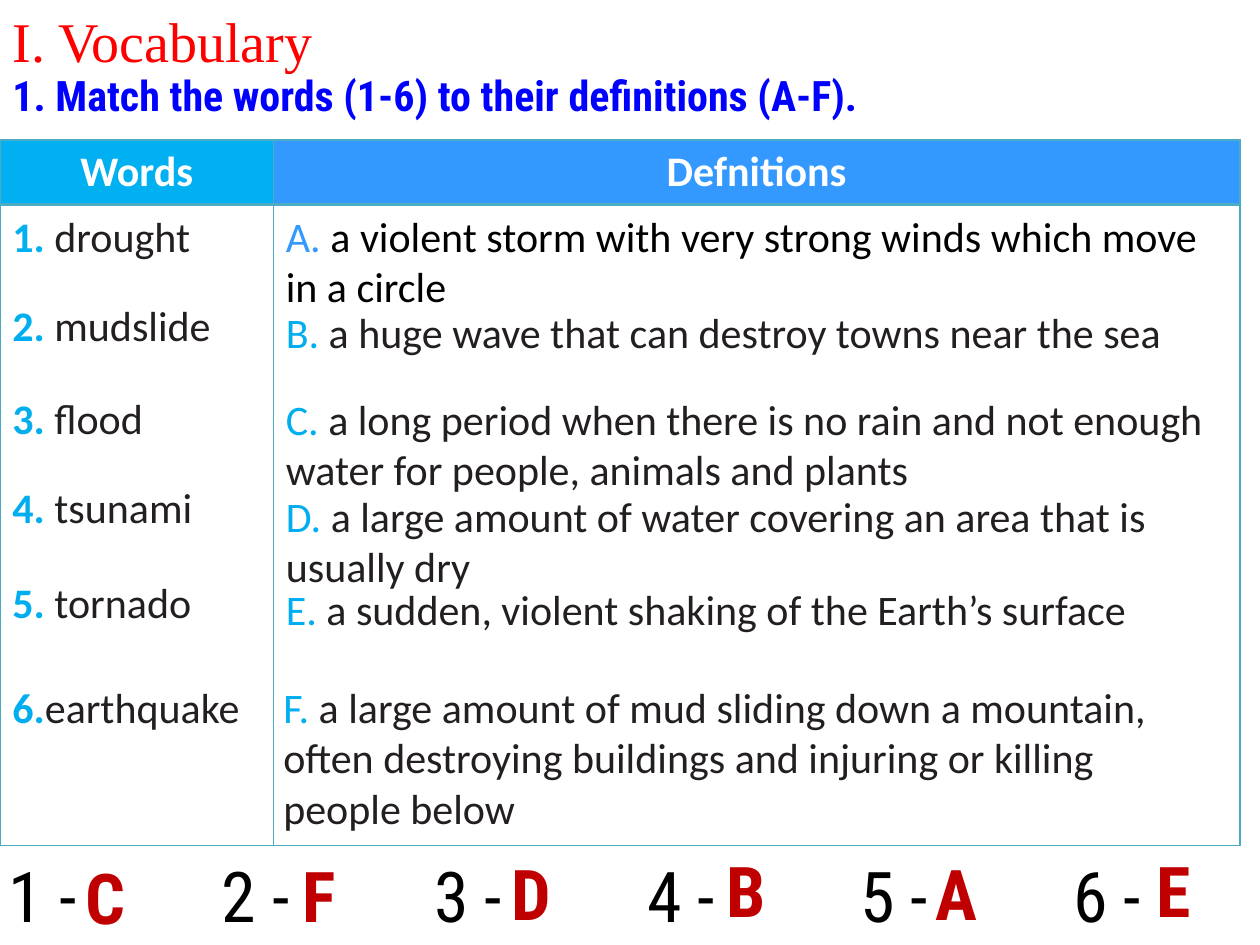
import lxml.etree
import pptx
import pptx.dml.color
import pptx.enum.text
import pptx.oxml.ns
import pptx.util

Inches = pptx.util.Inches
RGBColor = pptx.dml.color.RGBColor
qn = pptx.oxml.ns.qn
ALIGN = pptx.enum.text.PP_ALIGN
MIDDLE = pptx.enum.text.MSO_ANCHOR.MIDDLE

WHITE = RGBColor(0xFF, 0xFF, 0xFF)
BLACK = RGBColor(0, 0, 0)
RED = RGBColor(0xFF, 0, 0)
BLUE = RGBColor(0, 0, 0xFF)
SKY = RGBColor(0, 0xB0, 0xF0)
CYAN = RGBColor(0, 0xAE, 0xEF)
AZURE = RGBColor(0x33, 0x99, 0xFF)
TEAL = RGBColor(0x4B, 0xAC, 0xC6)
INK = RGBColor(0x23, 0x1F, 0x20)
WINE = RGBColor(0xC0, 0, 0)

BODY = "Calibri"
HEAD = "Roboto Condensed"

WORDS = [
    ("1. ", "drought", 1.62, 1.75, SKY),
    ("2. ", "mudslide", 2.33, 2, CYAN),
    ("3. ", "ﬂood", 3.07, 1.33, CYAN),
    ("4. ", "tsunami", 3.77, 1.75, CYAN),
    ("5. ", "tornado", 4.53, 1.75, CYAN),
    ("6.", "earthquake", 5.36, 2.15, CYAN),
]
MEANINGS = [
    ("A. ", "a violent storm with very strong winds which move in a circle",
     (2.17, 1.62, 7.67, 0.91), AZURE, BLACK),
    ("B. ", "a huge wave that can destroy towns near the sea",
     (2.17, 2.38, 7.67, 0.91), CYAN, INK),
    ("C. ", "a long period when there is no rain and not enough water for "
     "people, animals and plants", (2.17, 3.07, 7.67, 0.91), CYAN, INK),
    ("D. ", "a large amount of water covering an area that is usually dry",
     (2.17, 3.84, 7.58, 0.91), CYAN, INK),
    ("E. ", "a sudden, violent shaking of the Earth’s surface",
     (2.17, 4.58, 7.58, 0.91), CYAN, INK),
    ("F. ", "a large amount of mud sliding down a mountain, often destroying "
     "buildings and injuring or killing people below",
     (2.15, 5.36, 7.58, 1.31), CYAN, INK),
]
ANSWERS = [("C", 0.58, 6.73), ("F", 2.3, 6.72), ("D", 3.96, 6.7),
           ("B", 5.67, 6.68), ("A", 7.33, 6.7), ("E", 9.08, 6.68)]


def write(para, text, size=24, font=BODY, color=INK, bold=False):
    run = para.add_run()
    run.text = text
    run.font.size = pptx.util.Pt(size)
    run.font.name = font
    run.font.color.rgb = color
    run.font.bold = bold


class Page:
    def __init__(self, slide, line):
        self.slide = slide
        self.line = line

    def text(self, place, *parts):
        box = self.slide.shapes.add_textbox(*map(Inches, place))
        box.text_frame.word_wrap = True
        para = box.text_frame.paragraphs[0]
        for text, style in parts:
            write(para, text, **style)
        return para

    def tabs(self, para, step, count):
        stops = lxml.etree.SubElement(para._p.get_or_add_pPr(), qn("a:tabLst"))
        for n in range(1, count + 1):
            lxml.etree.SubElement(stops, qn("a:tab"),
                                  pos=str(Inches(step * n)), algn="l")

    def edge(self, cell, **widths):
        props = cell._tc.get_or_add_tcPr()
        for side in "LRTB":
            width = pptx.util.Pt(widths.get(side, 1))
            line = lxml.etree.SubElement(props, qn("a:ln" + side), w=str(width))
            fill = lxml.etree.SubElement(line, qn("a:solidFill"))
            lxml.etree.SubElement(fill, qn("a:srgbClr"), val=str(self.line))

    def table(self, place, cols, rows, heads):
        table = self.slide.shapes.add_table(
            len(rows), len(cols), *map(Inches, place)).table
        table.horz_banding = False
        for row, height in zip(table.rows, rows):
            row.height = Inches(height)
        for n, (width, (text, color)) in enumerate(zip(cols, heads)):
            table.columns[n].width = Inches(width)
            head, body = table.cell(0, n), table.cell(1, n)
            self.edge(head, B=2)
            self.edge(body, T=2)
            head.fill.solid()
            head.fill.fore_color.rgb = color
            body.fill.background()
            head.vertical_anchor = MIDDLE
            para = head.text_frame.paragraphs[0]
            para.alignment = ALIGN.CENTER
            write(para, text, color=WHITE, bold=True)


def main():
    deck = pptx.Presentation()
    deck.slide_width, deck.slide_height = Inches(10), Inches(7.5)
    page = Page(deck.slides.add_slide(deck.slide_layouts[6]), TEAL)

    page.table((0, 1.11, 9.84, 5.6), (2.17, 7.67), (0.51, 5.09),
               [("Words", SKY), ("Defnitions", AZURE)])
    for mark, word, top, width, color in WORDS:
        page.text((0, top, width, 0.5),
                  (mark, dict(color=color, bold=True)), (word, {}))
    for mark, text, place, color, ink in MEANINGS:
        page.text(place, (mark, dict(color=color)), (text, dict(color=ink)))

    row = "\t".join(f"{n} -" for n in range(1, len(ANSWERS) + 1))
    para = page.text((-0.03, 6.72, 10, 0.77),
                     (row, dict(size=40, font=HEAD, color=BLACK)))
    page.tabs(para, 1.69, len(ANSWERS) - 1)
    for mark, left, top in ANSWERS:
        page.text((left, top, 0.42, 0.77),
                  (mark, dict(size=40, font=HEAD, color=WINE, bold=True)))

    page.text((0, 0, 5, 0.64), ("I. Vocabulary", dict(
        size=32, font="Times New Roman", color=RED)))
    page.text((0, 0.5, 10, 0.91),
              ("1. Match the words (1-6) to their definitions (A-F).",
               dict(font=HEAD, color=BLUE, bold=True)))
    deck.save("out.pptx")


if __name__ == "__main__":
    main()
